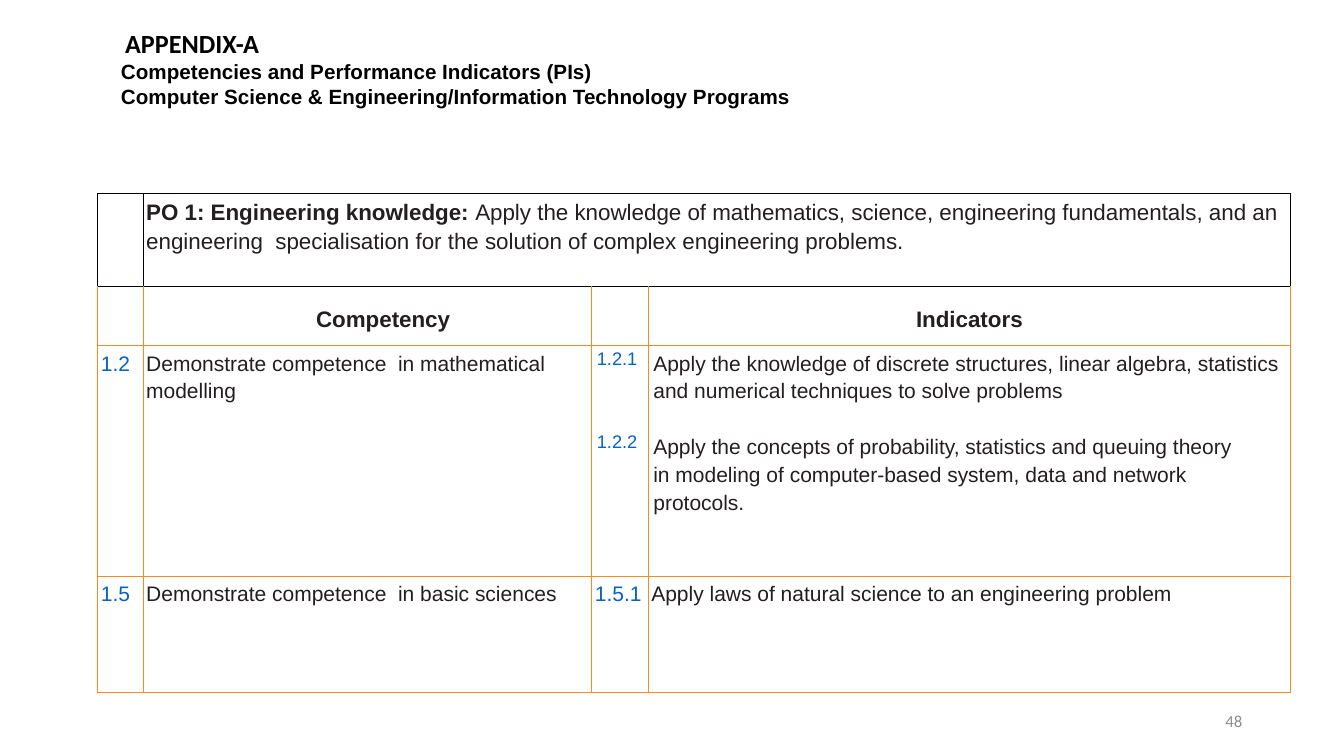
from lxml.etree import SubElement
from pptx import Presentation
from pptx.dml.color import RGBColor
from pptx.enum.text import MSO_ANCHOR, MSO_AUTO_SIZE, PP_ALIGN
from pptx.oxml.ns import qn
from pptx.util import Inches, Pt

BLACK, INK, BLUE, ORANGE, GREY = "000000", "231F20", "0563C1", "F68B1E", "8C8C8C"

HEADING = "APPENDIX-A"
SUBHEADING = [
    "Competencies and Performance Indicators (PIs)",
    "Computer Science & Engineering/Information Technology Programs",
]
PAGE = "48"
OUTCOME = [
    ("PO 1: Engineering knowledge: ", True),
    ("Apply the knowledge of mathematics, science, engineering fundamentals, "
     "and an engineering  specialisation for the solution of complex "
     "engineering problems.", False),
]
COLUMN_HEADS = {1: ("Competency", 0.31), 3: ("Indicators", 0)}  # text, left indent

# Each cell: lines, then format. "gaps" maps a line number to the points above it.
COMPETENCIES = [
    [
        (["1.2"], dict(color=BLUE)),
        (["Demonstrate competence  in mathematical", "modelling"], {}),
        (["1.2.1", "1.2.2"],
         dict(color=BLUE, size=13, indent=0.05, spacing=1, gaps={1: 45})),
        (["Apply the knowledge of discrete structures, linear algebra, statistics",
          "and numerical techniques to solve problems",
          "Apply the concepts of probability, statistics and queuing theory",
          "in modeling of computer-based system, data and network",
          "protocols."],
         dict(indent=0.05, gaps={2: 21, 3: 1, 4: 1})),
    ],
    [
        (["1.5"], dict(color=BLUE)),
        (["Demonstrate competence  in basic sciences"], {}),
        (["1.5.1"], dict(color=BLUE)),
        (["Apply laws of natural science to an engineering problem"], {}),
    ],
]
COLUMN_WIDTHS = [0.45, 4.45, 0.56, 6.37]
ROW_HEIGHTS = [0.92, 0.59, 2.29, 1.15]


def write(frame, lines, size=15, font="Arial", color=INK, bold=False,
          align=PP_ALIGN.LEFT, indent=0.03, spacing=1.15, gaps=None):
    """Fill a text frame; a line is a string or a list of (text, bold) runs."""
    for i, line in enumerate(lines):
        paragraph = frame.paragraphs[0] if i == 0 else frame.add_paragraph()
        paragraph.alignment = align
        paragraph.line_spacing = spacing
        paragraph.space_before = Pt((gaps or {}).get(i, 0))
        properties = paragraph._p.get_or_add_pPr()
        properties.set("marL", str(Inches(indent)))
        properties.set("indent", "0")
        for text, strong in [(line, bold)] if isinstance(line, str) else line:
            run = paragraph.add_run()
            run.text = text
            run.font.size = Pt(size)
            run.font.name = font
            run.font.bold = strong
            run.font.color.rgb = RGBColor.from_string(color)


def set_insets(frame, top):
    frame.margin_left = frame.margin_right = frame.margin_bottom = 0
    frame.margin_top = Inches(top)


def place(shape, left, top, width, height):
    shape.left, shape.top = Inches(left), Inches(top)
    shape.width, shape.height = Inches(width), Inches(height)


def add_text(slide, box, lines, **style):
    shape = slide.shapes.add_textbox(*map(Inches, box))
    frame = shape.text_frame
    frame.word_wrap = True
    frame.vertical_anchor = MSO_ANCHOR.MIDDLE
    write(frame, lines, spacing=1, **style)
    return frame


def set_borders(cell, colors):
    properties = cell._tc.get_or_add_tcPr()
    for position, (side, color) in enumerate(colors.items()):
        line = SubElement(properties, qn(f"a:{side}"), w=str(Pt(0.75)))
        properties.insert(position, line)
        fill = SubElement(line, qn("a:solidFill"))
        SubElement(fill, qn("a:srgbClr"), val=color)


def add_outcome_table(slide):
    table = slide.shapes.add_table(
        len(ROW_HEIGHTS), len(COLUMN_WIDTHS), Inches(0.97), Inches(1.92),
        Inches(sum(COLUMN_WIDTHS)), Inches(sum(ROW_HEIGHTS))).table
    table.first_row = table.horz_banding = False
    for column, width in zip(table.columns, COLUMN_WIDTHS):
        column.width = Inches(width)
    for r, (row, height) in enumerate(zip(table.rows, ROW_HEIGHTS)):
        row.height = Inches(height)
        edge = BLACK if r == 0 else ORANGE
        for cell in row.cells:
            set_insets(cell, 0.03)
            cell.fill.background()
            set_borders(cell, {"lnL": edge, "lnR": edge,
                               "lnT": BLACK if r < 2 else ORANGE, "lnB": edge})

    table.cell(0, 1).merge(table.cell(0, 3))
    write(table.cell(0, 1).text_frame, [OUTCOME], size=16)
    for c, (head, indent) in COLUMN_HEADS.items():
        cell = table.cell(1, c)
        cell.vertical_anchor = MSO_ANCHOR.MIDDLE
        write(cell.text_frame, [head], size=16, bold=True,
              align=PP_ALIGN.CENTER, indent=indent)
    for r, competency in enumerate(COMPETENCIES, start=2):
        for c, (lines, style) in enumerate(competency):
            write(table.cell(r, c).text_frame, lines, **style)


def main():
    deck = Presentation()
    deck.slide_width, deck.slide_height = Inches(13.33), Inches(7.5)
    slide = deck.slides.add_slide(deck.slide_layouts[5])

    title = slide.shapes.title
    place(title, 1.22, 0.28, 2.19, 0.27)
    title.text_frame.auto_size = MSO_AUTO_SIZE.NONE
    title.text_frame.vertical_anchor = MSO_ANCHOR.MIDDLE
    set_insets(title.text_frame, 0.02)
    write(title.text_frame, [HEADING], size=18.7, font="Calibri", color=BLACK,
          bold=True, indent=0.02, spacing=1)

    subheading = add_text(slide, (1.18, 0.56, 6.93, 0.52), SUBHEADING,
                          size=14.7, color=BLACK, bold=True, indent=0.02)
    set_insets(subheading, 0.02)
    add_outcome_table(slide)
    add_text(slide, (9.42, 6.95, 3, 0.4), [PAGE], size=12, font="Calibri",
             color=GREY, align=PP_ALIGN.RIGHT, indent=0)
    deck.save("out.pptx")


if __name__ == "__main__":
    main()
